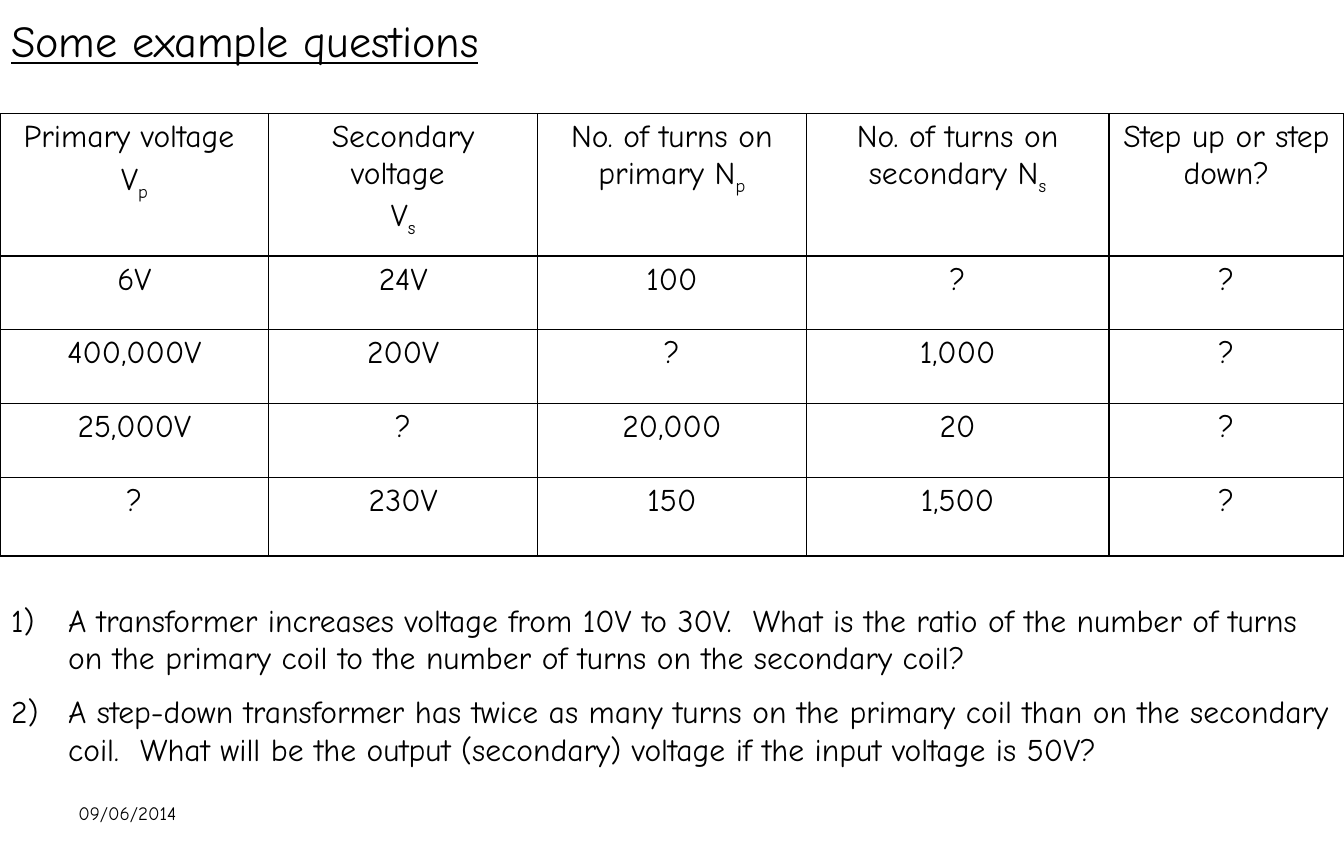
from dataclasses import dataclass

from lxml.etree import SubElement
from pptx import Presentation
from pptx.dml.color import RGBColor
from pptx.enum.text import MSO_ANCHOR as Anchor, PP_ALIGN as Align
from pptx.oxml import parse_xml
from pptx.oxml.ns import nsdecls, qn
from pptx.slide import Slide
from pptx.table import _Cell as Cell
from pptx.text.text import _Paragraph as Paragraph
from pptx.util import Inches, Pt

BLACK = RGBColor(0, 0, 0)
FONT = "Comic Neue"
BODY_SIZE = 20
SLIDE_WIDTH, SLIDE_HEIGHT = 189 / 16, 7.5
VALUE_WIDTH = SLIDE_WIDTH / 5
SECONDARY_TURNS_WIDTH = 2.66
STEP_WIDTH = SLIDE_WIDTH - 3 * VALUE_WIDTH - SECONDARY_TURNS_WIDTH
COLUMN_WIDTHS = (VALUE_WIDTH, VALUE_WIDTH, VALUE_WIDTH, SECONDARY_TURNS_WIDTH, STEP_WIDTH)
ROW_HEIGHTS = (1.25, 0.65, 0.65, 0.65, 0.69)
CELL_FORMAT = {
    "margin_left": Inches(0.12),
    "margin_right": Inches(0.12),
    "margin_top": Inches(0.05),
    "margin_bottom": Inches(0.05),
    "vertical_anchor": Anchor.TOP,
}
TABLE_FORMAT = {"first_row": False, "horz_banding": False}
TRANSFORMERS = (
    ("Primary voltage \nV_p", "Secondary voltage \nV_s", "No. of turns on primary N_p",
     "No. of turns on secondary N_s", "Step up or step down?"),
    ("6V", "24V", "100", "?", "?"),
    ("400,000V", "200V", "?", "1,000", "?"),
    ("25,000V", "?", "20,000", "20", "?"),
    ("?", "230V", "150", "1,500", "?"),
)


@dataclass(frozen=True)
class TextBlock:
    left: float
    top: float
    width: float
    height: float
    lines: tuple[str, ...]
    size: int = BODY_SIZE
    anchor: Anchor = Anchor.MIDDLE
    underline: bool = False
    numbered: bool = False


TEXT_BLOCKS = (
    TextBlock(0.59, 6.95, 2.76, 0.4, ("09/06/2014",), size=12),
    TextBlock(0, 0.02, 10.63, 0.66, ("Some example questions",), size=28, underline=True),
    TextBlock(0, 5.23, SLIDE_WIDTH, 1.95, (
        "A transformer increases voltage from 10V to 30V.  What is the ratio of the number "
        "of turns on the primary coil to the number of turns on the secondary coil?",
        "A step-down transformer has twice as many turns on the primary coil than on the "
        "secondary coil.  What will be the output (secondary) voltage if the input voltage is 50V?",
    ), anchor=Anchor.TOP, numbered=True),
)


def add_words(paragraph: Paragraph, words: str, size: int, underline: bool = False) -> None:
    font_format = {"name": FONT, "size": Pt(size), "underline": underline}
    for position, part in enumerate(words.split("_")):
        run = paragraph.add_run()
        run.text = part
        for attribute, setting in font_format.items():
            setattr(run.font, attribute, setting)
        run.font.color.rgb = BLACK
        if position:
            run.font._element.set("baseline", "-25000")


def space_before(paragraph: Paragraph, percent: int) -> None:
    spacing = SubElement(paragraph._p.get_or_add_pPr(), qn("a:spcBef"))
    SubElement(spacing, qn("a:spcPct"), val=str(percent * 1000))


def number_paragraph(paragraph: Paragraph) -> None:
    space_before(paragraph, 50)
    properties = paragraph._p.get_or_add_pPr()
    properties.set("marL", str(Inches(0.5)))
    properties.set("indent", str(Inches(-0.5)))
    SubElement(properties, qn("a:buFont"), typeface=FONT)
    SubElement(properties, qn("a:buAutoNum"), type="arabicParenR")


def draw_text(slide: Slide, block: TextBlock) -> None:
    frame = slide.shapes.add_textbox(
        Inches(block.left), Inches(block.top), Inches(block.width), Inches(block.height)
    ).text_frame
    frame.word_wrap = True
    frame.vertical_anchor = block.anchor
    for position, line in enumerate(block.lines):
        paragraph = frame.add_paragraph() if position else frame.paragraphs[0]
        if block.numbered:
            number_paragraph(paragraph)
        add_words(paragraph, line, block.size, block.underline)


def draw_borders(cell: Cell) -> None:
    properties = cell._tc.get_or_add_tcPr()
    for position, side in enumerate(("lnL", "lnR", "lnT", "lnB")):
        properties.insert(position, parse_xml(
            f'<a:{side} {nsdecls("a")} w="{Pt(1)}"><a:solidFill>'
            f'<a:srgbClr val="{BLACK}"/></a:solidFill></a:{side}>'
        ))


def fill_cell(cell: Cell, entry: str) -> None:
    for attribute, setting in CELL_FORMAT.items():
        setattr(cell, attribute, setting)
    cell.fill.background()
    draw_borders(cell)
    frame = cell.text_frame
    for position, line in enumerate(entry.split("\n")):
        paragraph = frame.add_paragraph() if position else frame.paragraphs[0]
        paragraph.alignment = Align.CENTER
        space_before(paragraph, 20)
        add_words(paragraph, line, BODY_SIZE)


def draw_transformers(slide: Slide) -> None:
    table = slide.shapes.add_table(
        len(ROW_HEIGHTS), len(COLUMN_WIDTHS), Inches(0), Inches(1),
        Inches(sum(COLUMN_WIDTHS)), Inches(sum(ROW_HEIGHTS)),
    ).table
    for attribute, setting in TABLE_FORMAT.items():
        setattr(table, attribute, setting)
    for column, width in zip(table.columns, COLUMN_WIDTHS):
        column.width = Inches(width)
    for row, height, entries in zip(table.rows, ROW_HEIGHTS, TRANSFORMERS):
        row.height = Inches(height)
        for cell, entry in zip(row.cells, entries):
            fill_cell(cell, entry)


def main() -> None:
    presentation = Presentation()
    presentation.slide_width = Inches(SLIDE_WIDTH)
    presentation.slide_height = Inches(SLIDE_HEIGHT)
    slide = presentation.slides.add_slide(presentation.slide_layouts[6])
    draw_transformers(slide)
    for block in TEXT_BLOCKS:
        draw_text(slide, block)
    presentation.save("out.pptx")


if __name__ == "__main__":
    main()
